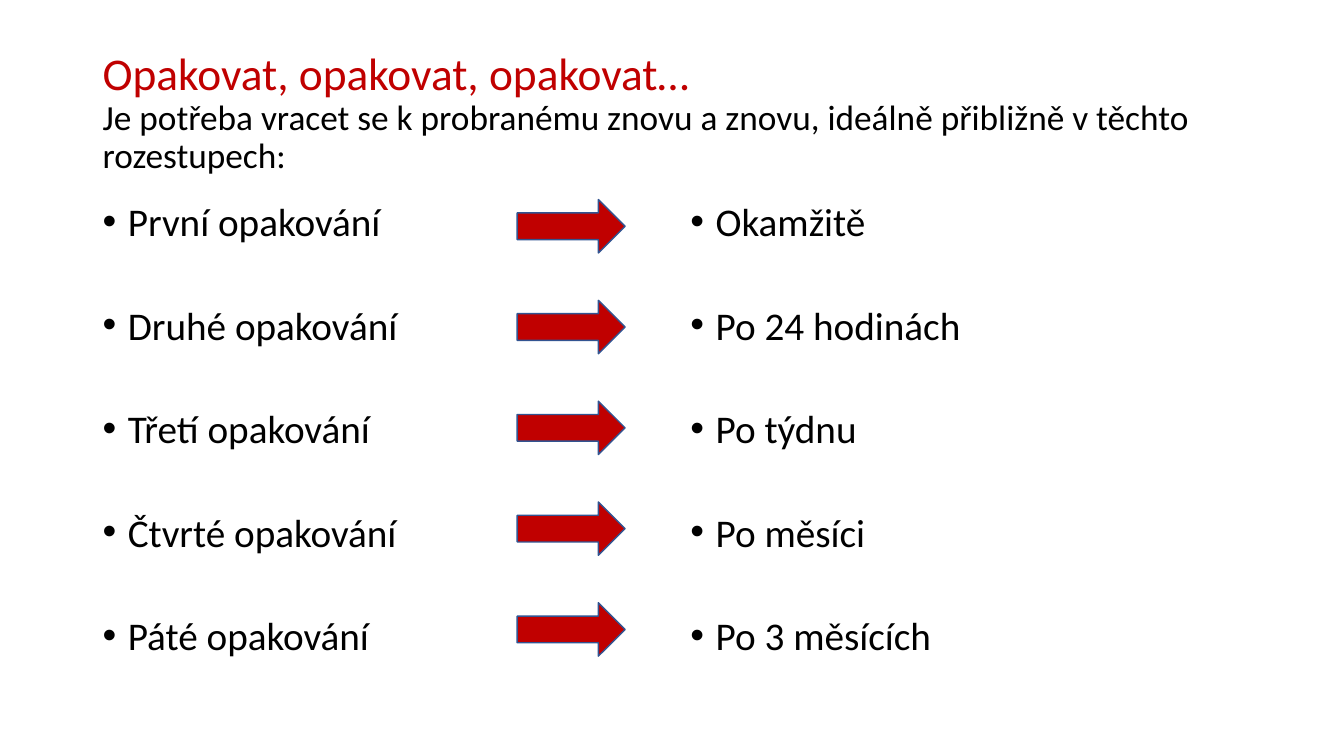
from lxml.etree import SubElement
from pptx import Presentation
from pptx.dml.color import RGBColor
from pptx.enum.shapes import MSO_SHAPE
from pptx.enum.text import MSO_ANCHOR
from pptx.oxml.ns import qn
from pptx.util import Inches, Pt

RED = "C00000"
BLACK = "000000"
ARROW_OUTLINE = "325491"
REPETITIONS = [
    ("První opakování", "Okamžitě"),
    ("Druhé opakování", "Po 24 hodinách"),
    ("Třetí opakování", "Po týdnu"),
    ("Čtvrté opakování", "Po měsíci"),
    ("Páté opakování", "Po 3 měsících"),
]


def color(hex_string):
    return RGBColor.from_string(hex_string)


def add_text_frame(slide, left, top, width, height):
    frame = slide.shapes.add_textbox(
        Inches(left), Inches(top), Inches(width), Inches(height)).text_frame
    frame.word_wrap = True
    return frame


def write_paragraph(frame, index, text, size, font_color, line_spacing):
    paragraph = frame.paragraphs[0] if index == 0 else frame.add_paragraph()
    paragraph.text = text
    paragraph.line_spacing = line_spacing
    paragraph.font.name = "Calibri"
    paragraph.font.size = Pt(size)
    paragraph.font.color.rgb = color(font_color)
    return paragraph


def set_bullet(paragraph):
    properties = paragraph._p.get_or_add_pPr()
    indent = Inches(0.25)
    properties.set("marL", str(indent))
    properties.set("indent", str(-indent))
    SubElement(properties, qn("a:buFont")).set("typeface", "Arial")
    SubElement(properties, qn("a:buChar")).set("char", "•")


def add_title(slide, heading, explanation):
    frame = add_text_frame(slide, 0.92, 0.4, 11.5, 1.45)
    frame.vertical_anchor = MSO_ANCHOR.MIDDLE
    write_paragraph(frame, 0, heading, 32.4, RED, 0.9)
    write_paragraph(frame, 1, explanation, 25.2, BLACK, 0.9)


def add_bullet_column(slide, left, items):
    frame = add_text_frame(slide, left, 2, 5.67, 4.76)
    for index, item in enumerate(items):
        paragraph = write_paragraph(frame, index, item, 28, BLACK, 0.8)
        paragraph.space_after = Pt(47)
        set_bullet(paragraph)


def add_arrow(slide, top):
    arrow = slide.shapes.add_shape(
        MSO_SHAPE.RIGHT_ARROW, Inches(5.13), Inches(top), Inches(1.07), Inches(0.53))
    arrow.shadow.inherit = False
    arrow.fill.solid()
    arrow.fill.fore_color.rgb = color(RED)
    arrow.line.color.rgb = color(ARROW_OUTLINE)
    arrow.line.width = Pt(1)


def main():
    presentation = Presentation()
    presentation.slide_width = Inches(13.33)
    presentation.slide_height = Inches(7.5)
    slide = presentation.slides.add_slide(presentation.slide_layouts[6])

    add_title(
        slide,
        "Opakovat, opakovat, opakovat…",
        "Je potřeba vracet se k probranému znovu a znovu, "
        "ideálně přibližně v těchto rozestupech:")
    for left, items in zip((0.92, 6.75), zip(*REPETITIONS)):
        add_bullet_column(slide, left, items)
    for row in range(len(REPETITIONS)):
        add_arrow(slide, 1.98 + row)

    presentation.save("out.pptx")


if __name__ == "__main__":
    main()
